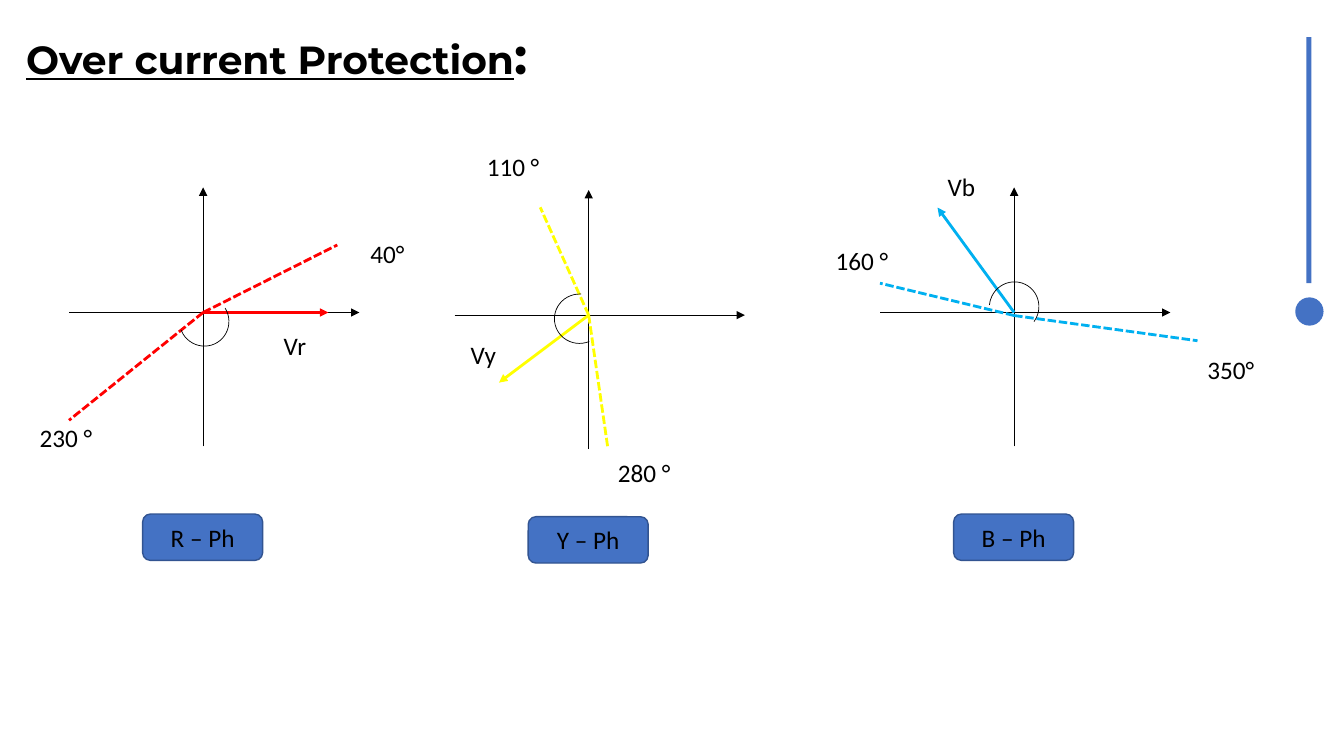
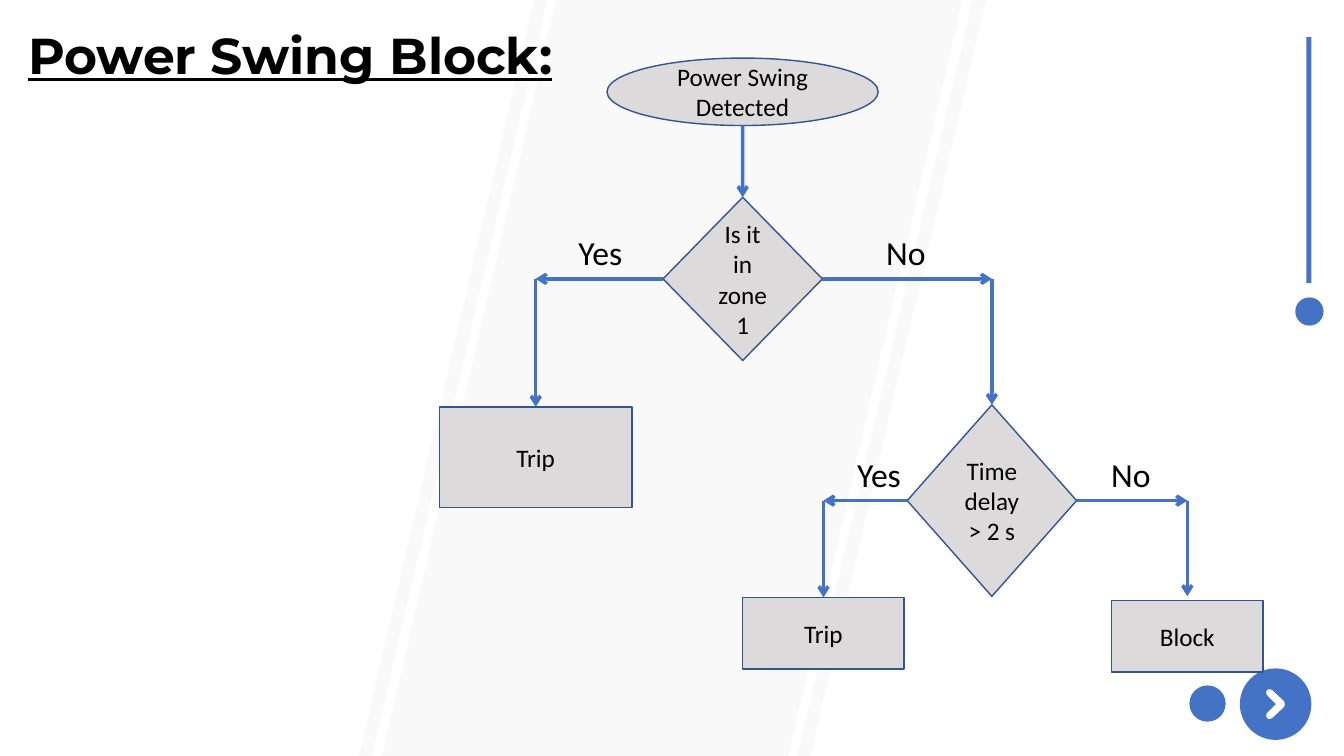
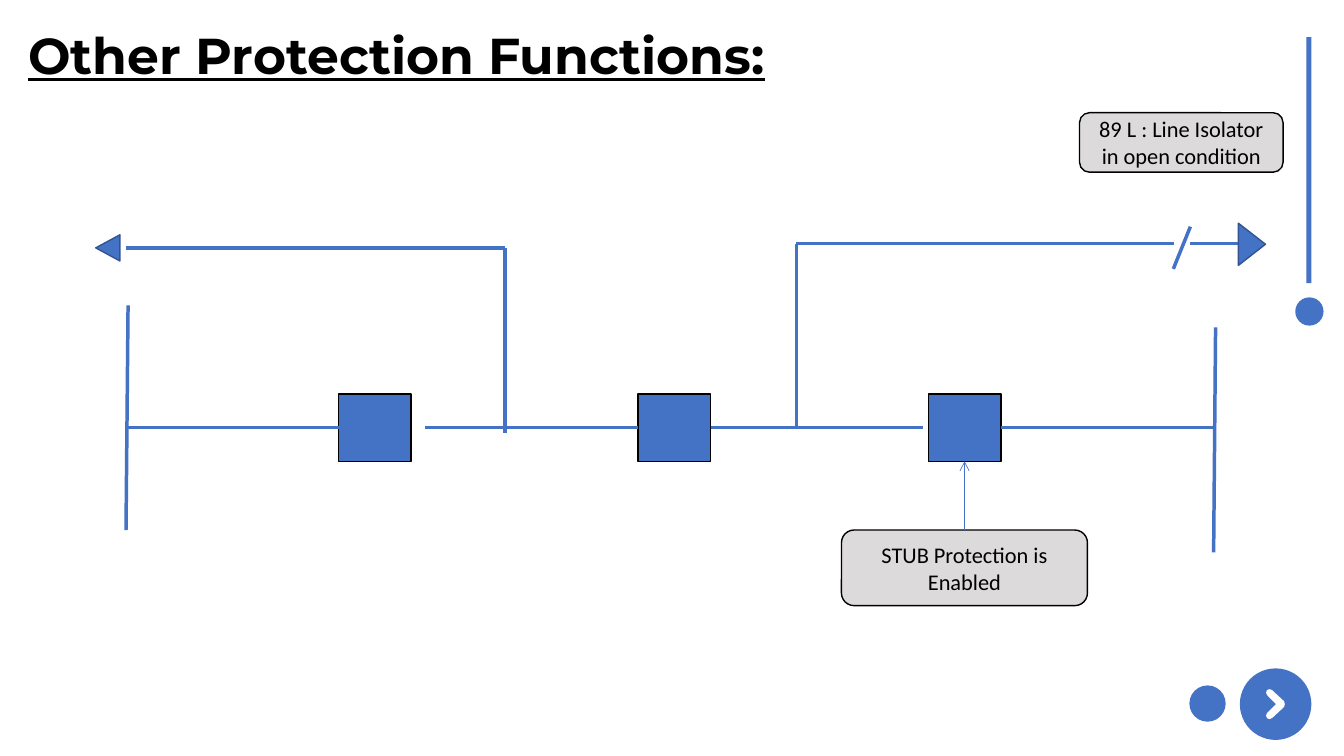
"""Build three slides on line protection."""
from dataclasses import dataclass
from typing import NamedTuple

import lxml.etree
import pptx
import pptx.dml.color
import pptx.enum.dml
import pptx.enum.shapes
import pptx.enum.text
import pptx.oxml.ns
import pptx.util

Pt = pptx.util.Pt
SHAPE = pptx.enum.shapes.MSO_SHAPE
TOP, LEFT, BOTTOM, RIGHT = range(4)


@dataclass(frozen=True)
class Theme:
    """Colours, fonts and sizes shared by the slides."""
    accent: str = "4472C4"
    edge: str = "325491"
    ink: str = "000000"
    paper: str = "FFFFFF"
    panel: str = "DCDADA"
    backdrop: str = "E7E6E6"
    red: str = "FF0000"
    yellow: str = "FFFF00"
    blue: str = "00B0F0"
    title_font: str = "Montserrat"
    body_font: str = "Calibri"
    title: float = 36
    title_small: float = 28
    branch: float = 24
    body: float = 18
    note: float = 16
    hair: float = 0.5
    outline: float = 1
    ray: float = 2
    wire: float = 2.5


T = Theme()


class Box(NamedTuple):
    """A rectangle in points."""
    x: float
    y: float
    w: float
    h: float

    def at(self, dx, dy, w, h):
        """Return a box offset from this one's corner."""
        return Box(self.x + dx, self.y + dy, w, h)

    def point(self, dx, dy):
        """Return a point offset from this box's corner."""
        return self.x + dx, self.y + dy

    def side(self, index):
        """Return the middle of a side."""
        cx, cy = self.x + self.w / 2, self.y + self.h / 2
        return ((cx, self.y), (self.x, cy), (cx, self.y + self.h), (self.x + self.w, cy))[index]


class Node(NamedTuple):
    """A drawn shape with its box."""
    box: Box
    sp: object


class Phase(NamedTuple):
    """One phasor diagram, with offsets taken from its origin."""
    name: str
    color: str
    corner: tuple
    rays: tuple
    vector: tuple
    labels: tuple
    arc: tuple
    ray_drop: float = 0


def rgb(color):
    """Turn a hex string into a colour."""
    return pptx.dml.color.RGBColor.from_string(color)


def emu(box):
    """Turn a sequence of points into lengths."""
    return [Pt(v) for v in box]


def style_font(font, size, name=T.body_font):
    """Set the size, face and ink of a font."""
    font.size, font.name = Pt(size), name
    font.color.rgb = rgb(T.ink)


def finish(sp, fill=None, line=None, width=T.outline):
    """Set fill and line and remove the shadow."""
    sp.shadow.inherit = False
    if fill:
        sp.fill.solid()
        sp.fill.fore_color.rgb = rgb(fill)
    else:
        sp.fill.background()
    if line:
        sp.line.color.rgb = rgb(line)
        sp.line.width = Pt(width)
    else:
        sp.line.fill.background()


def add_shape(s, kind, box, fill=None, line=None, text=None, size=T.body, width=T.outline, turn=0):
    """Draw a preset shape with optional centred text."""
    sp = s.shapes.add_shape(kind, *emu(box))
    finish(sp, fill, line, width)
    sp.rotation = turn
    if text:
        tf = sp.text_frame
        tf.word_wrap = True
        tf.vertical_anchor = pptx.enum.text.MSO_ANCHOR.MIDDLE
        p = tf.paragraphs[0]
        p.text = text
        p.alignment = pptx.enum.text.PP_ALIGN.CENTER
        style_font(p.font, size)
    return Node(box, sp)


def add_label(s, box, text, size=T.body):
    """Write one line of plain text."""
    tf = s.shapes.add_textbox(*emu(box)).text_frame
    tf.word_wrap = True
    p = tf.paragraphs[0]
    p.text = text
    style_font(p.font, size)


def add_line(s, start, end, color=T.accent, width=T.wire, head=None, dashed=False):
    """Draw a straight line between points or (node, side) pairs."""
    joins = [e if isinstance(e[0], Node) else None for e in (start, end)]
    a, b = (j[0].box.side(j[1]) if j else e for j, e in zip(joins, (start, end)))
    cxn = s.shapes.add_connector(pptx.enum.shapes.MSO_CONNECTOR.STRAIGHT, *emu(a + b))
    for join, connect in zip(joins, (cxn.begin_connect, cxn.end_connect)):
        if join:
            connect(join[0].sp, join[1])
    cxn.line.color.rgb = rgb(color)
    cxn.line.width = Pt(width)
    if dashed:
        cxn.line.dash_style = pptx.enum.dml.MSO_LINE_DASH_STYLE.SQUARE_DOT
    qn = pptx.oxml.ns.qn
    props = cxn._element.spPr
    if head:
        lxml.etree.SubElement(props.find(qn("a:ln")), qn("a:tailEnd"), type=head)
    lxml.etree.SubElement(props, qn("a:effectLst"))


def add_title(s, box, parts):
    """Write the bold title from (text, size, underlined) parts."""
    tf = s.shapes.add_textbox(*emu(box)).text_frame
    tf.word_wrap = True
    p = tf.paragraphs[0]
    style_font(p.font, T.title, T.title_font)
    p.font.bold = True
    for text, size, underlined in parts:
        r = p.add_run()
        r.text = text
        r.font.size, r.font.underline = Pt(size), underlined


def add_marker(s, box):
    """Draw the bar and dot at the right edge."""
    add_shape(s, SHAPE.RECTANGLE, box.at(7.9, 0, 3.6, 175.7), T.accent)
    add_shape(s, SHAPE.OVAL, box.at(0, box.h - box.w, box.w, box.w), T.accent)


def add_next_button(s, box):
    """Draw the small dot and the disc with a chevron."""
    add_shape(s, SHAPE.OVAL, box.at(0, 12.2, 25.9, 25.9), T.accent)
    disc = box.at(box.w - box.h, 0, box.h, box.h)
    add_shape(s, SHAPE.OVAL, disc, T.accent)
    half = [(6.6, 0), (6.1, 2), (-2.5, 10), (-4.4, 10.7), (-6.1, 10), (-6.8, 8.2), (-6.1, 6.5), (0.3, 0)]
    outline = half + [(x, -y) for x, y in half[-2:0:-1]]
    points = [emu(disc.point(disc.w / 2 + x, disc.h / 2 + y)) for x, y in outline]
    builder = s.shapes.build_freeform(*points[0], scale=1.0)
    builder.add_line_segments(points[1:], close=True)
    finish(builder.convert_to_shape(), T.paper)


def add_backdrop(s, box):
    """Draw the pale slanted bands."""
    qn = pptx.oxml.ns.qn
    bands = [(box, 0)] + [(box.at(dx, -22.7, 13, 625.7), 12.7) for dx in (352.8, 39.6)]
    for band, turn in bands:
        sp = add_shape(s, SHAPE.PARALLELOGRAM, band, T.backdrop, turn=turn).sp
        sp.adjustments[0] = 0.3
        color = sp._element.spPr.find(qn("a:solidFill")).find(qn("a:srgbClr"))
        lxml.etree.SubElement(color, qn("a:alpha"), val="23000")


def add_phase(s, box, phase):
    """Draw the axes, rays, vector and labels of one phase."""
    origin = box.at(95.8, 89.3, 0, 0)
    add_line(s, box.point(0, 89.3), box.point(box.w, 89.3), T.ink, T.hair, "triangle")
    add_line(s, box.point(95.8, box.h), box.point(95.8, 0), T.ink, T.hair, "triangle")
    for ray in phase.rays:
        add_line(s, origin.point(0, phase.ray_drop), origin.point(*ray), phase.color, T.ray, dashed=True)
    add_line(s, origin.point(0, 0), origin.point(*phase.vector), phase.color, T.ray, "triangle")
    for text, dx, dy in phase.labels:
        add_label(s, origin.at(dx, dy, 54, 28.8), text)
    add_shape(s, SHAPE.ROUNDED_RECTANGLE, box.at(52.6, 233.3, 85.7, 33.1), T.accent, T.edge, phase.name)
    dx, dy, turn, start = phase.arc
    arc = add_shape(s, SHAPE.ARC, origin.at(dx, dy, 36, 35.3), line=T.ink, width=T.hair, turn=turn).sp
    for i, degrees in enumerate((start, 100.3)):
        arc.adjustments[i] = degrees * 0.6


def add_branch(s, parent, side, child, text, nudge=0, gap=0):
    """Lead sideways from a decision and down to its outcome."""
    edge_x, y = parent.box.side(side)
    x, top = child.box.side(TOP)
    add_line(s, (parent, side), (x, y), head="arrow")
    add_line(s, (x, y), (x, top - gap) if gap else (child, TOP), head="arrow")
    add_label(s, Box((edge_x + x) / 2 - 22 + nudge, y - 37, 54, 36), text, T.branch)


def add_flowchart(s, box):
    """Draw the power swing decision chart."""
    def node(kind, text, *place):
        """Draw one step of the chart."""
        return add_shape(s, kind, box.at(*place), T.panel, T.edge, text)

    detected = node(SHAPE.OVAL, "Power Swing Detected", 119.7, 0, 193.7, 48.2)
    zone = node(SHAPE.DIAMOND, "Is it in zone1", 159.7, 99.4, 113.8, 116.6)
    trip = node(SHAPE.RECTANGLE, "Trip", 0, 249.1, 137.5, 72)
    delay = node(SHAPE.DIAMOND, "Time delay > 2 s", 334.1, 247.7, 121, 136.8)
    late_trip = node(SHAPE.RECTANGLE, "Trip", 216.7, 385.2, 115.2, 51.1)
    block = node(SHAPE.RECTANGLE, "Block", 480.2, 387.4, 108, 51.1)
    add_line(s, detected.box.side(BOTTOM), (zone, TOP), head="arrow")
    add_branch(s, zone, LEFT, trip, "Yes")
    add_branch(s, zone, RIGHT, delay, "No")
    add_branch(s, delay, LEFT, late_trip, "Yes", nudge=9)
    add_branch(s, delay, RIGHT, block, "No", gap=3)


def add_line_diagram(s, box):
    """Draw the breakers, buses and line feeders with their notes."""
    pt = box.point
    rail = 225
    first, middle, last = [
        add_shape(s, SHAPE.RECTANGLE, box.at(x, rail - 24.1, 51.8, 48.2), T.accent, T.ink)
        for x in (174.2, 388.1, 595.4)
    ]
    wires = [
        (pt(23.8, 137.6), pt(22.3, 298.1)),
        (pt(800.6, 153.4), pt(799.2, 314)),
        (pt(22.3, rail), (first, LEFT)),
        (pt(236.2, rail), (middle, LEFT)),
        ((middle, RIGHT), pt(591.8, rail)),
        ((last, RIGHT), pt(799.2, rail)),
        (pt(293, 96.5), pt(293, 229)),
        (pt(22.3, 96.5), pt(293, 96.5)),
        (pt(501.1, 93.6), pt(501.1, rail)),
        (pt(501.1, 93.6), pt(771.1, 93.6)),
        (pt(782.6, 81.4), pt(770.4, 111.6)),
        (pt(782.6, 93.6), pt(817.2, 93.6)),
    ]
    for start, end in wires:
        add_line(s, start, end)
    for place, turn in (((0, 87.9, 18.7, 17.3), 270), ((811.4, 84.3, 30.2, 19.4), 90)):
        add_shape(s, SHAPE.ISOSCELES_TRIANGLE, box.at(*place), T.accent, T.edge, turn=turn)
    notes = [
        ("89 L : Line Isolator in open condition", (703.4, 0, 145.4, 42.5)),
        ("STUB Protection is Enabled", (533.4, 298.1, 175.7, 54)),
    ]
    isolator, stub = [
        add_shape(s, SHAPE.ROUNDED_RECTANGLE, box.at(*place), T.panel, T.ink, text, T.note)
        for text, place in notes
    ]
    add_line(s, (stub, TOP), (last, BOTTOM), width=T.hair, head="arrow")


PHASES = [
    Phase("R – Ph", T.red, (49.3, 133.9), ((95.8, -48.2), (-95.8, 77)), (89.5, 0),
          (("40°", 112.3, -56.2), ("230 °", -123.8, 74.9), ("Vr", 50.4, 9.4)),
          (-17.3, -11.5, 58.4, 270)),
    Phase("Y – Ph", T.yellow, (324.7, 135.8), ((-34.6, -77), (13.7, 95)), (-64.1, 48.2),
          (("110 °", -79.9, -120.2), ("280 °", 13.7, 97.9), ("Vy", -91.4, 13.7)),
          (-24.5, -15.1, 173.2, 253.9)),
    Phase("B – Ph", T.blue, (628.6, 133.9), ((-95.8, -20.9), (131, 20.2)), (-54.7, -74.9),
          (("160 °", -134.6, -51.8), ("Vb", -54.7, -104.4), ("350°", 131, 26.6)),
          (-18, -21.6, 296.1, 248.44), 2.2),
]


def add_slide(prs, parts, title_box=Box(13, 13.7, 543.6, 51.1), backdrop=False, button=True):
    """Add a blank slide with the shared marker, title and button."""
    s = prs.slides.add_slide(prs.slide_layouts[6])
    if backdrop:
        add_backdrop(s, Box(272.9, 0, 414.7, 540))
    add_marker(s, Box(925.2, 26.6, 20.2, 206))
    add_title(s, title_box, parts)
    if button:
        add_next_button(s, Box(849.6, 477.4, 87.1, 51.1))
    return s


def main():
    """Build and save the presentation."""
    prs = pptx.Presentation()
    prs.slide_width, prs.slide_height = Pt(960), Pt(540)
    parts = [("Over current Protection", T.title_small, True), (":", T.title, False)]
    s = add_slide(prs, parts, Box(11.5, 13.7, 870.5, 51.1), button=False)
    for phase in PHASES:
        add_phase(s, Box(*phase.corner, 207.4, 185), phase)
    s = add_slide(prs, [("Power Swing Block:", T.title, True)], backdrop=True)
    add_flowchart(s, Box(313.9, 41.5, 588.2, 438.5))
    s = add_slide(prs, [("Other Protection Functions:", T.title, True)])
    add_line_diagram(s, Box(67.7, 80.5, 848.8, 352.1))
    prs.save("out.pptx")


if __name__ == "__main__":
    main()
